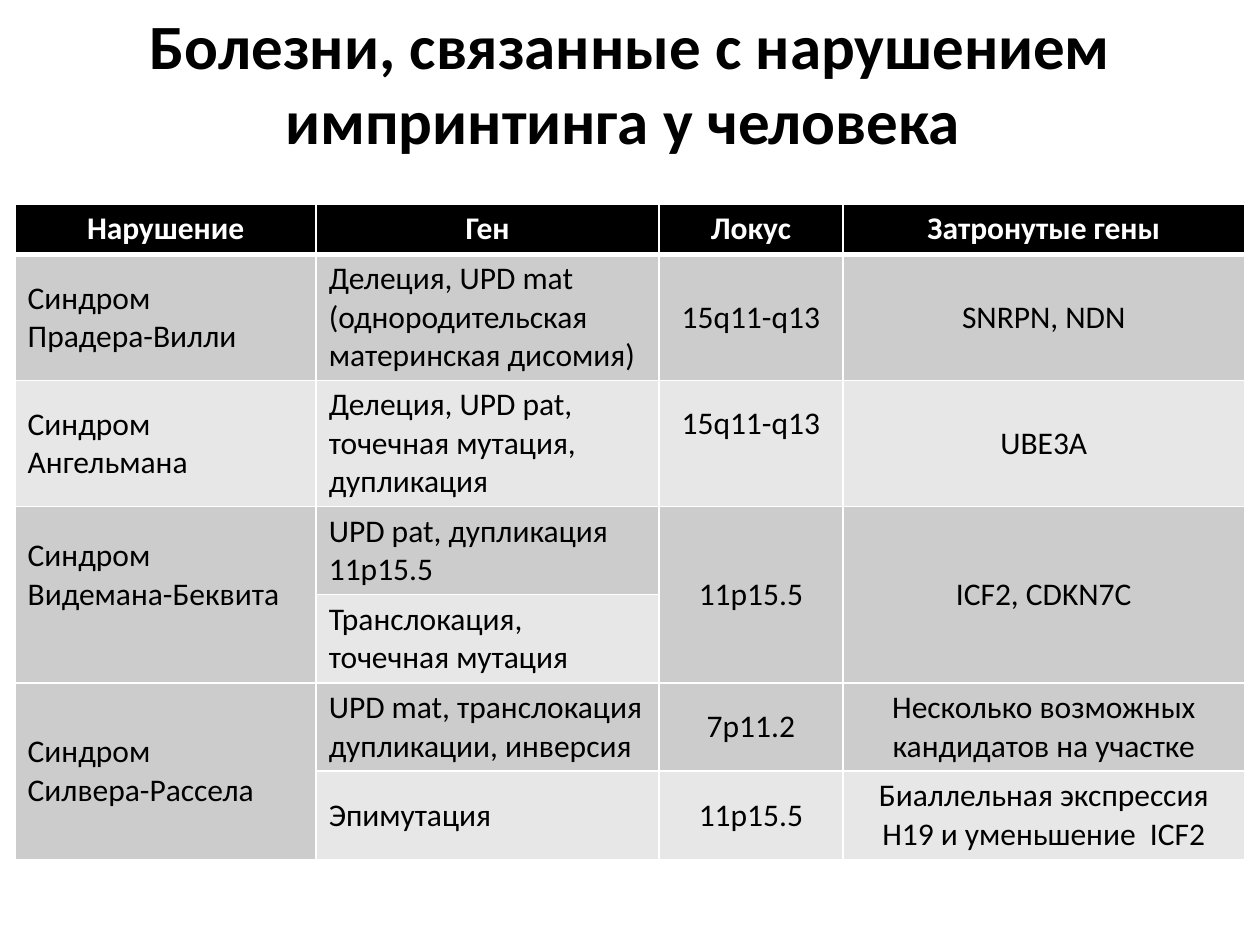
"""Build a slide with a table of human imprinting disorders."""
import lxml.etree
import pptx
import pptx.dml.color
import pptx.enum.text
import pptx.oxml.ns
import pptx.util

Inches = pptx.util.Inches
Points = pptx.util.Pt
Anchor = pptx.enum.text.MSO_ANCHOR
Align = pptx.enum.text.PP_ALIGN
qualified = pptx.oxml.ns.qn

TITLE = "Болезни, связанные с нарушением импринтинга у человека "
HEADER = ("Нарушение", "Ген", "Локус", "Затронутые гены")
DISORDERS = [
    ("Синдром\nПрадера-Вилли", "Делеция, UPD mat (однородительская материнская дисомия)",
     "15q11-q13", "SNRPN, NDN"),
    ("Синдром Ангельмана", "Делеция, UPD pat, точечная мутация, дупликация",
     "15q11-q13", "UBE3A"),
    ("Синдром\nВидемана-Беквита", "UPD pat, дупликация 11p15.5", "11p15.5", "ICF2, CDKN7C"),
    (None, "Транслокация, точечная мутация", None, None),
    ("Синдром\nСилвера-Рассела", "UPD mat, транслокация дупликации, инверсия",
     "7p11.2", "Несколько возможных кандидатов на участке"),
    (None, "Эпимутация", "11p15.5", "Биаллельная экспрессия H19 и уменьшение  ICF2"),
]
COLUMN_WIDTHS = (2.39, 2.72, 1.46, 3.19)
ROW_HEIGHTS = (0.4, 1, 1, 0.7, 0.7, 0.7, 0.7)
RAISED_CELLS = {(2, 2), (3, 0)}
THEME = {
    "font": "Calibri", "title_size": 36, "table_size": 18,
    "text": "000000", "header_text": "FFFFFF", "header_fill": "000000",
    "bands": ("E7E7E7", "CCCCCC"), "border": "FFFFFF",
    "thin": 1, "thick": 3, "padding": 0.04, "line_height": 0.31,
}


def color(value):
    """Return an RGB colour."""
    return pptx.dml.color.RGBColor.from_string(value)


def write(frame, text, size, text_color, bold, alignment):
    """Write text with one paragraph per line."""
    for index, line in enumerate(text.split("\n")):
        paragraph = frame.add_paragraph() if index else frame.paragraphs[0]
        paragraph.alignment = alignment
        run = paragraph.add_run()
        run.text = line
        run.font.name = THEME["font"]
        run.font.size = Points(size)
        run.font.bold = bold
        run.font.color.rgb = color(text_color)


def set_borders(cell, row):
    """Draw white borders, thicker below the header."""
    properties = cell._tc.get_or_add_tcPr()
    thick_side = {0: "lnB", 1: "lnT"}.get(row)
    for index, side in enumerate(("lnL", "lnR", "lnT", "lnB")):
        width = THEME["thick" if side == thick_side else "thin"]
        line = lxml.etree.Element(qualified(f"a:{side}"), w=str(Points(width)))
        fill = lxml.etree.SubElement(line, qualified("a:solidFill"))
        lxml.etree.SubElement(fill, qualified("a:srgbClr"), val=THEME["border"])
        properties.insert(index, line)


def fill_cell(cell, row, column, text):
    """Format one table cell and write its text."""
    header = row == 0
    set_borders(cell, row)
    cell.fill.solid()
    merged_down = text is None
    band = THEME["bands"][(row - merged_down) % 2]
    cell.fill.fore_color.rgb = color(THEME["header_fill"] if header else band)
    cell.margin_top = Inches(THEME["padding"])
    raise_by = THEME["line_height"] if (row, column) in RAISED_CELLS else 0
    cell.margin_bottom = Inches(THEME["padding"] + raise_by)
    cell.vertical_anchor = Anchor.TOP if header else Anchor.MIDDLE
    if text:
        alignment = Align.CENTER if header or column > 1 else Align.LEFT
        text_color = THEME["header_text" if header else "text"]
        write(cell.text_frame, text, THEME["table_size"], text_color, header, alignment)


def add_disorder_table(slide):
    """Add the table, merging cells that continue downwards."""
    rows = [HEADER] + DISORDERS
    table = slide.shapes.add_table(
        len(rows), len(HEADER), Inches(0.12), Inches(1.62),
        Inches(sum(COLUMN_WIDTHS)), Inches(sum(ROW_HEIGHTS))).table
    for column, width in zip(table.columns, COLUMN_WIDTHS):
        column.width = Inches(width)
    for row, height in zip(table.rows, ROW_HEIGHTS):
        row.height = Inches(height)
    for row, texts in enumerate(rows):
        for column, text in enumerate(texts):
            fill_cell(table.cell(row, column), row, column, text)
            if text is None:
                table.cell(row - 1, column).merge(table.cell(row, column))


def main():
    """Create and save the presentation."""
    presentation = pptx.Presentation()
    presentation.slide_width, presentation.slide_height = Inches(10), Inches(7.5)
    slide = presentation.slides.add_slide(presentation.slide_layouts[5])
    title = slide.shapes.title
    title.left, title.top, title.width, title.height = map(Inches, (0, 0, 10, 1.31))
    title.text_frame.vertical_anchor = Anchor.TOP
    title.text_frame.auto_size = pptx.enum.text.MSO_AUTO_SIZE.NONE
    write(title.text_frame, TITLE, THEME["title_size"], THEME["text"], True, Align.CENTER)
    add_disorder_table(slide)
    presentation.save("out.pptx")


if __name__ == "__main__":
    main()
